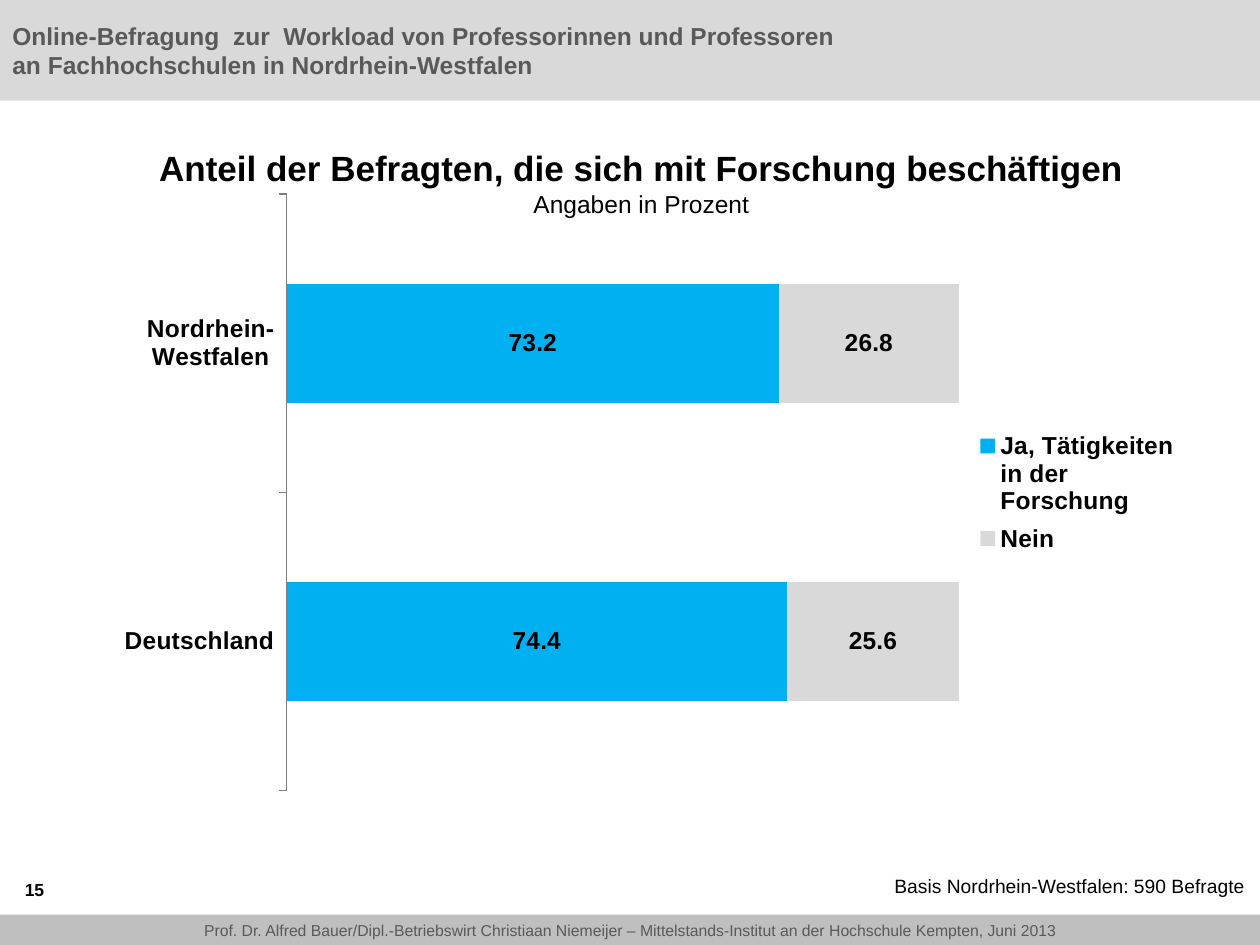
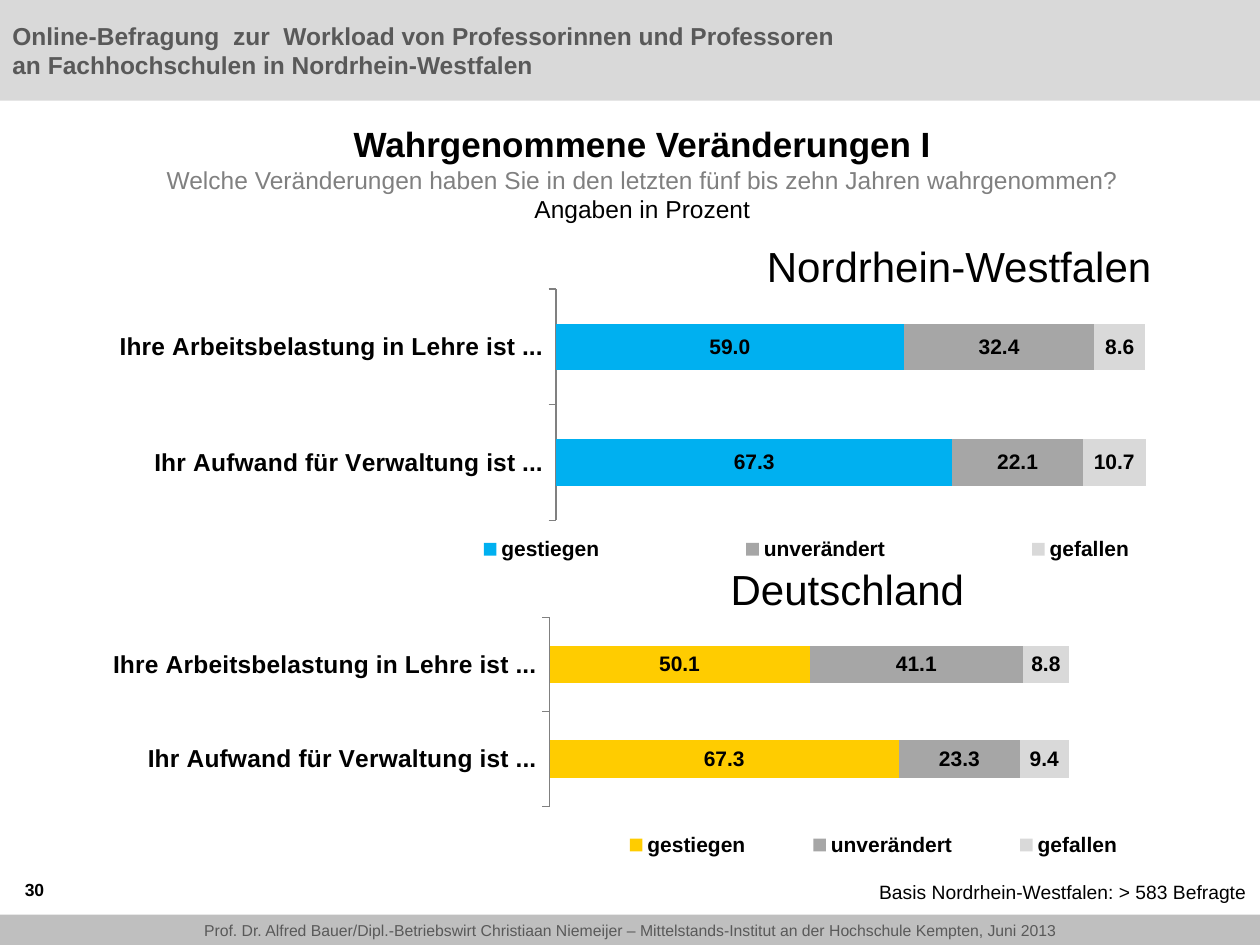
from lxml import etree
from pptx import Presentation
from pptx import util as u
from pptx.chart import data as chart_data
from pptx.dml.color import RGBColor
from pptx.enum import chart as charts, shapes, text
from pptx.oxml import parse_xml
from pptx.oxml.ns import nsdecls, qn

BLACK = RGBColor(0x00, 0x00, 0x00)
DARK_GRAY = RGBColor(0x59, 0x59, 0x59)
QUESTION_GRAY = RGBColor(0x80, 0x80, 0x80)
MID_GRAY = RGBColor(0xA6, 0xA6, 0xA6)
FOOTER_GRAY = RGBColor(0xBF, 0xBF, 0xBF)
LIGHT_GRAY = RGBColor(0xD9, 0xD9, 0xD9)
BLUE = RGBColor(0x00, 0xB0, 0xF0)
YELLOW = RGBColor(0xFF, 0xCC, 0x00)

FONT = "Arial"
HEADER = [
    "Online-Befragung  zur  Workload von Professorinnen und Professoren",
    "an Fachhochschulen in Nordrhein-Westfalen",
]
FOOTER = (
    "Prof. Dr. Alfred Bauer/Dipl.-Betriebswirt Christiaan Niemeijer – "
    "Mittelstands-Institut an der Hochschule Kempten, Juni 2013"
)
UNIT = ("Angaben in Prozent", 14, False, BLACK)
WORKLOAD_TOPICS = [
    "Ihre Arbeitsbelastung in Lehre ist ...",
    "Ihr Aufwand für Verwaltung ist ...",
]


def lengths(area):
    return [u.Cm(value) for value in area]


def style_font(font, size, bold=False, color=BLACK):
    values = {"name": FONT, "size": u.Pt(size), "bold": bold}
    for name, value in values.items():
        setattr(font, name, value)
    font.color.rgb = color


def write_lines(frame, lines, size, bold=False, color=BLACK,
                align=text.PP_ALIGN.LEFT, anchor=text.MSO_ANCHOR.TOP):
    frame.word_wrap = True
    frame.vertical_anchor = anchor
    for index, line in enumerate(lines):
        para = frame.add_paragraph() if index else frame.paragraphs[0]
        para.alignment = align
        span = para.add_run()
        span.text = line
        style_font(span.font, size, bold, color)


def add_label(page, area, line, size, **style):
    box = page.shapes.add_textbox(*lengths(area))
    write_lines(box.text_frame, [line], size, **style)


def add_band(page, top, height, fill, lines, size, **style):
    band = page.shapes.add_shape(
        shapes.MSO_SHAPE.RECTANGLE, *lengths((0, top, 25.4, height)))
    band.shadow.inherit = False
    band.fill.solid()
    band.fill.fore_color.rgb = fill
    band.line.fill.background()
    frame = band.text_frame
    frame.margin_top = frame.margin_bottom = 0
    write_lines(frame, lines, size, color=DARK_GRAY,
                anchor=text.MSO_ANCHOR.MIDDLE, **style)


def set_title(page, area, parts):
    title = page.shapes.title
    places = dict(zip(("left", "top", "width", "height"), lengths(area)))
    for name, value in places.items():
        setattr(title, name, value)
    frame = title.text_frame
    frame.auto_size = text.MSO_AUTO_SIZE.NONE
    frame.vertical_anchor = text.MSO_ANCHOR.MIDDLE
    para = frame.paragraphs[0]
    para.alignment = text.PP_ALIGN.CENTER
    for index, (line, size, bold, color) in enumerate(parts):
        if index:
            para.add_line_break()
        span = para.add_run()
        span.text = line
        style_font(span.font, size, bold, color)


def add_page(deck, number, title_area, title_parts, basis_area, basis):
    page = deck.slides.add_slide(deck.slide_layouts[5])
    add_band(page, 0, 2.03, LIGHT_GRAY, HEADER, 14, bold=True)
    add_band(page, 18.44, 0.64, FOOTER_GRAY, [FOOTER], 9,
             align=text.PP_ALIGN.CENTER)
    set_title(page, title_area, title_parts)
    add_label(page, basis_area, basis, 11, align=text.PP_ALIGN.RIGHT)
    add_label(page, (0.25, 17.42, 5.92, 1.02), number, 10, bold=True,
              anchor=text.MSO_ANCHOR.MIDDLE)
    return page


def set_layout(parent, index, area, inner=False):
    for previous in parent.findall(qn("c:layout")):
        parent.remove(previous)
    layout = etree.Element(qn("c:layout"))
    manual = etree.SubElement(layout, qn("c:manualLayout"))
    settings = [("layoutTarget", "inner")] if inner else []
    settings += [("xMode", "edge"), ("yMode", "edge")]
    settings += zip("xywh", area)
    for name, value in settings:
        etree.SubElement(manual, qn(f"c:{name}")).set("val", str(value))
    parent.insert(index, layout)


def clear_background(chart):
    empty = parse_xml(
        f"<c:spPr {nsdecls('c', 'a')}><a:noFill/>"
        "<a:ln><a:noFill/></a:ln></c:spPr>")
    chart.element.find(qn("c:chart")).addnext(empty)


def add_bars(page, kind, area, categories, series, plot_area, legend_area,
             small_size, maximum=None):
    content = chart_data.CategoryChartData(number_format="#,##0.0")
    content.categories = categories
    for name, values, color in series:
        content.add_series(name, values)
    chart = page.shapes.add_chart(kind, *lengths(area), content).chart
    chart.has_title = False
    style_font(chart.font, 10)
    clear_background(chart)

    plot = chart.plots[0]
    plot.gap_width = 150
    plot.overlap = 100
    plot.vary_by_categories = False
    for bars, (name, values, color) in zip(plot.series, series):
        bars.format.fill.solid()
        bars.format.fill.fore_color.rgb = color
        labels = bars.data_labels
        label_values = {
            "show_value": True,
            "number_format": "#,##0.0",
            "number_format_is_linked": False,
            "position": charts.XL_LABEL_POSITION.CENTER,
        }
        for key, value in label_values.items():
            setattr(labels, key, value)
        style_font(labels.font, small_size, True)

    axis = chart.category_axis
    axis.reverse_order = True
    axis.major_tick_mark = charts.XL_TICK_MARK.OUTSIDE
    axis.format.line.color.rgb = QUESTION_GRAY
    style_font(axis.tick_labels.font, 14, True)
    chart.value_axis.visible = False
    chart.value_axis.has_major_gridlines = False
    if maximum:
        chart.value_axis.minimum_scale = 0
        chart.value_axis.maximum_scale = maximum

    chart.has_legend = True
    chart.legend.position = charts.XL_LEGEND_POSITION.RIGHT
    chart.legend.include_in_layout = False
    style_font(chart.legend.font, small_size, True)
    plot_element = chart.element.find(".//" + qn("c:plotArea"))
    set_layout(plot_element, 0, plot_area, inner=True)
    set_layout(chart.element.find(".//" + qn("c:legend")), 1, legend_area)


def add_workload_bars(page, area, first_color, values, plot_height, legend_area):
    names = ["gestiegen", "unverändert", "gefallen"]
    colors = [first_color, MID_GRAY, LIGHT_GRAY]
    add_bars(page, charts.XL_CHART_TYPE.BAR_STACKED, area, WORKLOAD_TOPICS,
             list(zip(names, values, colors)),
             (0.421, 0.019, 0.573, plot_height), legend_area, 12, 120)


def add_research_page(deck):
    page = add_page(
        deck, "15", (2.16, 2.74, 21.54, 1.88),
        [("Anteil der Befragten, die sich mit Forschung beschäftigen",
          20, True, BLACK), UNIT],
        (14.76, 17.5, 10.59, 0.74), "Basis Nordrhein-Westfalen: 590 Befragte")
    add_bars(
        page, charts.XL_CHART_TYPE.BAR_STACKED_100,
        (1.14, 3.23, 23.09, 13.39), ["Nordrhein-Westfalen", "Deutschland"],
        [("Ja, Tätigkeiten in der Forschung", [73.2, 74.4], BLUE),
         ("Nein", [26.8, 25.6], LIGHT_GRAY)],
        (0.201, 0.051, 0.587, 0.898), (0.796, 0.395, 0.19, 0.21), 14)


def add_changes_page(deck):
    question = ("Welche Veränderungen haben Sie in den letzten fünf bis zehn "
                "Jahren wahrgenommen?")
    page = add_page(
        deck, "30", (2.18, 2.54, 21.54, 1.9),
        [("Wahrgenommene Veränderungen I", 20, True, BLACK),
         (question, 14, False, QUESTION_GRAY), UNIT],
        (16.54, 17.63, 8.84, 0.74), "Basis Nordrhein-Westfalen: > 583 Befragte")
    add_workload_bars(
        page, (1.85, 12.34, 21.92, 5.46), YELLOW,
        [[50.1, 67.3], [41.1, 23.3], [8.8, 9.4]],
        0.698, (0.439, 0.8, 0.56, 0.12))
    add_label(page, (15.21, 4.72, 8.36, 1.27), "Nordrhein-Westfalen", 24)
    add_label(page, (14.48, 11.23, 5.28, 1.27), "Deutschland", 24)
    add_workload_bars(
        page, (0.74, 5.72, 24.87, 5.77), BLUE,
        [[59.0, 67.3], [32.4, 22.1], [8.6, 10.7]],
        0.808, (0.249, 0.868, 0.75, 0.12))


def main():
    deck = Presentation()
    deck.slide_width = u.Cm(25.4)
    deck.slide_height = u.Cm(19.05)
    add_research_page(deck)
    add_changes_page(deck)
    deck.save("out.pptx")


if __name__ == "__main__":
    main()
